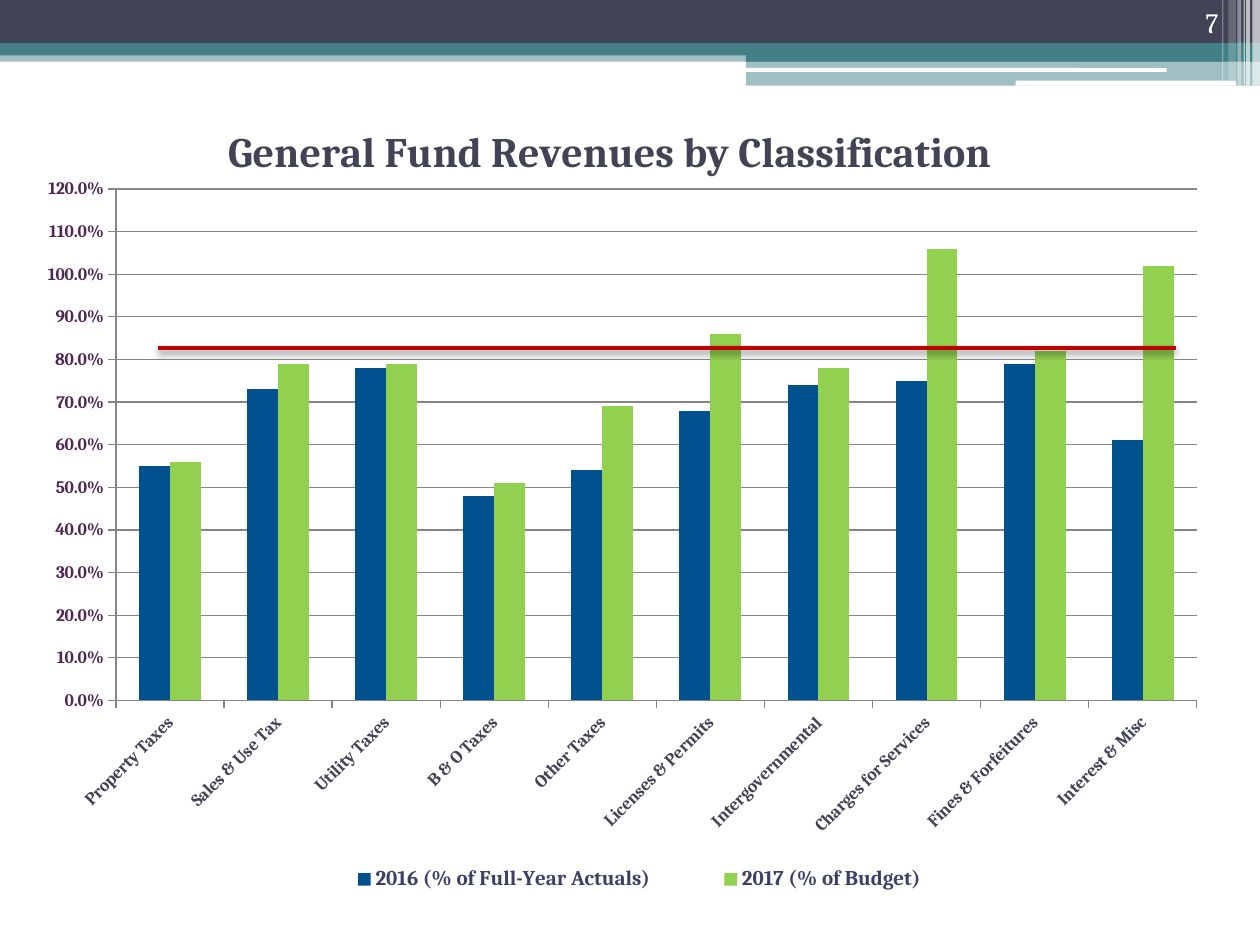
from lxml import etree
from pptx import Presentation
from pptx.chart.data import CategoryChartData
from pptx.dml.color import RGBColor
from pptx.enum.chart import XL_CHART_TYPE, XL_LEGEND_POSITION, XL_TICK_MARK
from pptx.enum.shapes import MSO_CONNECTOR, MSO_SHAPE
from pptx.enum.text import MSO_ANCHOR, PP_ALIGN
from pptx.oxml import parse_xml
from pptx.oxml.ns import nsdecls, qn
from pptx.util import Inches, Pt

FONT = "Cambria"
WHITE = RGBColor(0xFF, 0xFF, 0xFF)
SLATE = RGBColor(0x42, 0x44, 0x56)
TEAL = RGBColor(0x43, 0x80, 0x86)
PLUM = RGBColor(0x50, 0x26, 0x52)
INDIGO = RGBColor(0x3E, 0x3F, 0x68)
BLUE = RGBColor(0x00, 0x51, 0x8E)
GREEN = RGBColor(0x92, 0xD0, 0x50)
RED = RGBColor(0xC0, 0x00, 0x00)
GRAY = RGBColor(0x86, 0x86, 0x86)

REVENUES = [
    ("Property Taxes", 0.55, 0.56),
    ("Sales & Use Tax", 0.73, 0.79),
    ("Utility Taxes", 0.78, 0.79),
    ("B & O Taxes", 0.48, 0.51),
    ("Other Taxes", 0.54, 0.69),
    ("Licenses & Permits", 0.68, 0.86),
    ("Intergovernmental", 0.74, 0.78),
    ("Charges for Services", 0.75, 1.06),
    ("Fines & Forfeitures", 0.79, 0.82),
    ("Interest & Misc", 0.61, 1.02),
]


def add_bar(slide, left, top, width, height, color, alpha=100, rounded=False):
    shape = MSO_SHAPE.ROUNDED_RECTANGLE if rounded else MSO_SHAPE.RECTANGLE
    sp = slide.shapes.add_shape(
        shape, Inches(left), Inches(top), Inches(width), Inches(height))
    sp.shadow.inherit = False
    sp.line.fill.background()
    sp.fill.solid()
    sp.fill.fore_color.rgb = color
    if alpha < 100:
        clr = sp.fill._xPr.find(".//" + qn("a:srgbClr"))
        etree.SubElement(clr, qn("a:alpha")).set("val", str(alpha * 1000))


def add_header(slide, width):
    step = 5.92  # where the band drops to its lower level
    add_bar(slide, 0, 0.4, width, 0.09, TEAL, 50)
    add_bar(slide, 0, 0, width, 0.34, SLATE)
    add_bar(slide, 0, 0.34, width, 0.1, TEAL)
    add_bar(slide, step, 0.39, width - step, 0.1, TEAL)
    add_bar(slide, step, 0.48, width - step, 0.2, TEAL, 50)
    add_bar(slide, 5.91, 0.54, 3.35, 0.03, WHITE, rounded=True)
    add_bar(slide, 8.06, 0.64, 1.75, 0.04, WHITE, rounded=True)
    # Stripes: distance from the right edge, width, height, opacity
    for offset, w, h, alpha in [
        (0.06, 0.06, 0.68, 65), (0.11, 0.03, 0.68, 65), (0.13, 0.01, 0.68, 60),
        (0.18, 0.03, 0.68, 40), (0.25, 0.06, 0.64, 20), (0.3, 0.01, 0.64, 30),
    ]:
        add_bar(slide, width - offset, 0, w, h, WHITE, alpha)


def add_page_number(slide, left, top, width, height, number):
    tf = slide.shapes.add_textbox(
        Inches(left), Inches(top), Inches(width), Inches(height)).text_frame
    tf.word_wrap = True
    tf.vertical_anchor = MSO_ANCHOR.BOTTOM
    tf.text = number
    p = tf.paragraphs[0]
    p.alignment = PP_ALIGN.RIGHT
    style_font(p.runs[0].font, 16, WHITE, False)


def style_font(font, size, color, bold=True):
    font.name = FONT
    font.size = Pt(size)
    font.bold = bold
    font.color.rgb = color


def set_layout(parent, index, chart_size, position, size=None, inner=False):
    """Place a chart part by inches from the chart's top left corner."""
    for old in parent.findall(qn("c:layout")):
        parent.remove(old)
    values = [("layoutTarget", "inner")] if inner else []
    values += [("xMode", "edge"), ("yMode", "edge")]
    for tags, lengths in (("xy", position), ("wh", size or ())):
        values += [(tag, length / full)
                   for tag, length, full in zip(tags, lengths, chart_size)]
    layout = parse_xml(f"<c:layout {nsdecls('c')}><c:manualLayout/></c:layout>")
    for tag, value in values:
        etree.SubElement(layout[0], qn("c:" + tag)).set("val", str(value))
    parent.insert(index, layout)


def style_axis(axis, color):
    axis.major_tick_mark = XL_TICK_MARK.OUTSIDE
    axis.minor_tick_mark = XL_TICK_MARK.NONE
    axis.format.line.color.rgb = GRAY
    style_font(axis.tick_labels.font, 10, color)


def add_revenue_chart(slide, left, top, width, height):
    names, actuals, budget = zip(*REVENUES)
    data = CategoryChartData(number_format="0.0%")
    data.categories = names
    data.add_series("2016 (% of Full-Year Actuals)", actuals)
    data.add_series("2017 (% of Budget)", budget)
    chart = slide.shapes.add_chart(
        XL_CHART_TYPE.COLUMN_CLUSTERED, Inches(left), Inches(top),
        Inches(width), Inches(height), data).chart
    chart.font.name = FONT
    chart.font.size = Pt(10)
    size = (width, height)

    tf = chart.chart_title.text_frame
    tf.text = "General Fund Revenues by Classification"
    style_font(tf.paragraphs[0].runs[0].font, 24, SLATE)
    chart.chart_title.include_in_layout = True
    set_layout(chart.chart_title._element, 1, size, (1.5, 0.1))

    plot = chart.plots[0]
    plot.gap_width = 150
    plot.overlap = 0
    plot.vary_by_categories = False
    for series, color in zip(plot.series, (BLUE, GREEN)):
        series.format.fill.solid()
        series.format.fill.fore_color.rgb = color
    set_layout(chart._chartSpace.chart.plotArea, 0, size,
               (0.67, 0.67), (8.58, 4.06), inner=True)

    style_axis(chart.category_axis, SLATE)
    body = chart.category_axis._element.find(
        qn("c:txPr")).find(qn("a:bodyPr"))
    body.set("rot", str(-45 * 60000))
    body.set("vert", "horz")

    axis = chart.value_axis
    style_axis(axis, PLUM)
    axis.minimum_scale, axis.maximum_scale, axis.major_unit = 0, 1.2, 0.1
    axis.has_major_gridlines = True
    axis.major_gridlines.format.line.color.rgb = GRAY
    axis.tick_labels.number_format = "0.0%"
    axis.tick_labels.number_format_is_linked = False

    chart.has_legend = True
    chart.legend.position = XL_LEGEND_POSITION.BOTTOM
    chart.legend.include_in_layout = False
    style_font(chart.legend.font, 12, INDIGO)
    set_layout(chart.legend._element, 1, size, (2.06, 5.96), (5.53, 0.38))


def add_target_line(slide, left, right, y):
    line = slide.shapes.add_connector(
        MSO_CONNECTOR.STRAIGHT, Inches(left), Inches(y), Inches(right), Inches(y))
    line.line.color.rgb = RED
    line.line.width = Pt(2.5)
    line._element.spPr.append(parse_xml(
        f'<a:effectLst {nsdecls("a")}>'
        f'<a:outerShdw blurRad="{Pt(4)}" dist="{Pt(2)}" dir="5400000" rotWithShape="0">'
        '<a:srgbClr val="000000"><a:alpha val="45000"/></a:srgbClr>'
        '</a:outerShdw></a:effectLst>'))


def main():
    prs = Presentation()
    prs.slide_width, prs.slide_height = Inches(10), Inches(7.5)
    slide = prs.slides.add_slide(prs.slide_layouts[6])
    add_header(slide, 10)
    add_page_number(slide, 8.94, 0, 0.83, 0.36, "7")
    add_revenue_chart(slide, 0.25, 0.83, 9.5, 6.37)
    add_target_line(slide, 1.25, 9.33, 2.76)
    prs.save("out.pptx")


if __name__ == "__main__":
    main()
